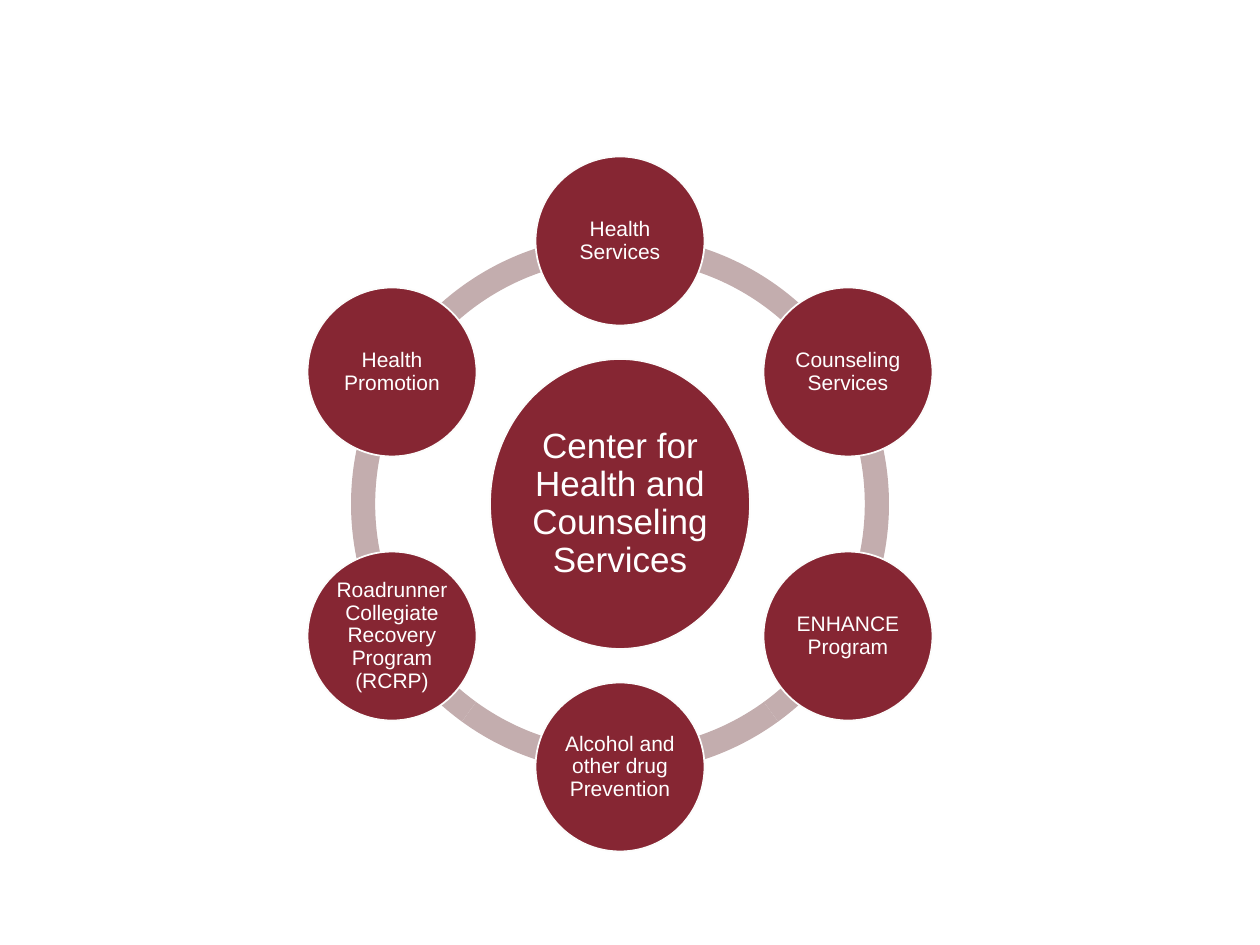
from dataclasses import dataclass
from math import cos, radians, sin

from pptx import Presentation
from pptx.dml.color import RGBColor
from pptx.enum.shapes import MSO_SHAPE as Preset
from pptx.enum.text import MSO_ANCHOR as Anchor, PP_ALIGN as Align
from pptx.shapes.autoshape import Shape
from pptx.slide import Slide
from pptx.util import Emu, Pt

SCALE = 914400 / 126
MAROON = RGBColor(0x86, 0x26, 0x33)
ROSE = RGBColor(0xC3, 0xAD, 0xAE)
OUTLINE = RGBColor(0xFC, 0xFC, 0xFB)
WHITE = RGBColor(0xFF, 0xFF, 0xFF)

CENTER_X, CENTER_Y = 620, 504
RING_SIZE = 538
RING_THICKNESS = 0.045
DEGREE = 0.6
NODE_SIZE = 169
ORBIT_RADIUS = 263
ARC_SPANS = [(126, 162), (90, 126), (54, 90), (18, 54), (198, 18), (162, 198)]
SERVICES = [
    "Health Services",
    "Counseling Services",
    "ENHANCE Program",
    "Alcohol and other drug Prevention",
    "Roadrunner Collegiate Recovery Program (RCRP)",
    "Health Promotion",
]


@dataclass(frozen=True)
class Node:
    """A labelled ellipse, placed by its middle point."""
    label: str
    x: int
    y: int
    width: int
    height: int
    font_size: int
    inset: int


def px(length: float) -> Emu:
    """Turn pixels into EMU."""
    return Emu(round(length * SCALE))


def add_centered(slide: Slide, preset: Preset, x: int, y: int,
                 width: int, height: int, fill: RGBColor) -> Shape:
    """Add a filled shape around a middle point."""
    shape = slide.shapes.add_shape(
        preset, px(x - width / 2), px(y - height / 2), px(width), px(height))
    shape.shadow.inherit = False
    shape.fill.solid()
    shape.fill.fore_color.rgb = fill
    return shape


def write_text(shape: Shape, text: str, *, size: int, inset: int,
               color: RGBColor = WHITE, font: str = "Arial") -> None:
    """Write one centred paragraph in a shape."""
    frame = shape.text_frame
    frame.word_wrap = True
    frame.vertical_anchor = Anchor.MIDDLE
    frame.margin_left = frame.margin_right = px(inset)
    frame.margin_top = frame.margin_bottom = px(inset)
    paragraph = frame.paragraphs[0]
    paragraph.alignment = Align.CENTER
    paragraph.line_spacing = 0.9
    run = paragraph.add_run()
    run.text = text
    run.font.name = font
    run.font.size = Pt(size)
    run.font.color.rgb = color


def draw_arc(slide: Slide, start: int, end: int) -> None:
    """Draw one segment of the ring."""
    arc = add_centered(slide, Preset.BLOCK_ARC, CENTER_X, CENTER_Y,
                       RING_SIZE, RING_SIZE, ROSE)
    arc.line.fill.background()
    for index, value in enumerate((start * DEGREE, end * DEGREE, RING_THICKNESS)):
        arc.adjustments[index] = value


def draw_node(slide: Slide, node: Node) -> None:
    """Draw an ellipse with its label."""
    ellipse = add_centered(slide, Preset.OVAL, node.x, node.y,
                           node.width, node.height, MAROON)
    ellipse.line.color.rgb = OUTLINE
    ellipse.line.width = Pt(1)
    write_text(ellipse, node.label, size=node.font_size, inset=node.inset)


def service_node(index: int, label: str) -> Node:
    """Place a service on the orbit, clockwise from the top."""
    angle = radians(360 / len(SERVICES) * index - 90)
    return Node(label, round(CENTER_X + ORBIT_RADIUS * cos(angle)),
                round(CENTER_Y + ORBIT_RADIUS * sin(angle)),
                NODE_SIZE, NODE_SIZE, 12, 2)


def main() -> None:
    """Build the services diagram."""
    presentation = Presentation()
    presentation.slide_width, presentation.slide_height = px(1260), px(945)
    slide = presentation.slides.add_slide(presentation.slide_layouts[6])
    for start, end in ARC_SPANS:
        draw_arc(slide, start, end)
    draw_node(slide, Node("Center for Health and Counseling Services",
                          CENTER_X, CENTER_Y, 260, 290, 20, 3))
    for index, label in enumerate(SERVICES):
        draw_node(slide, service_node(index, label))
    presentation.save("out.pptx")


if __name__ == "__main__":
    main()
